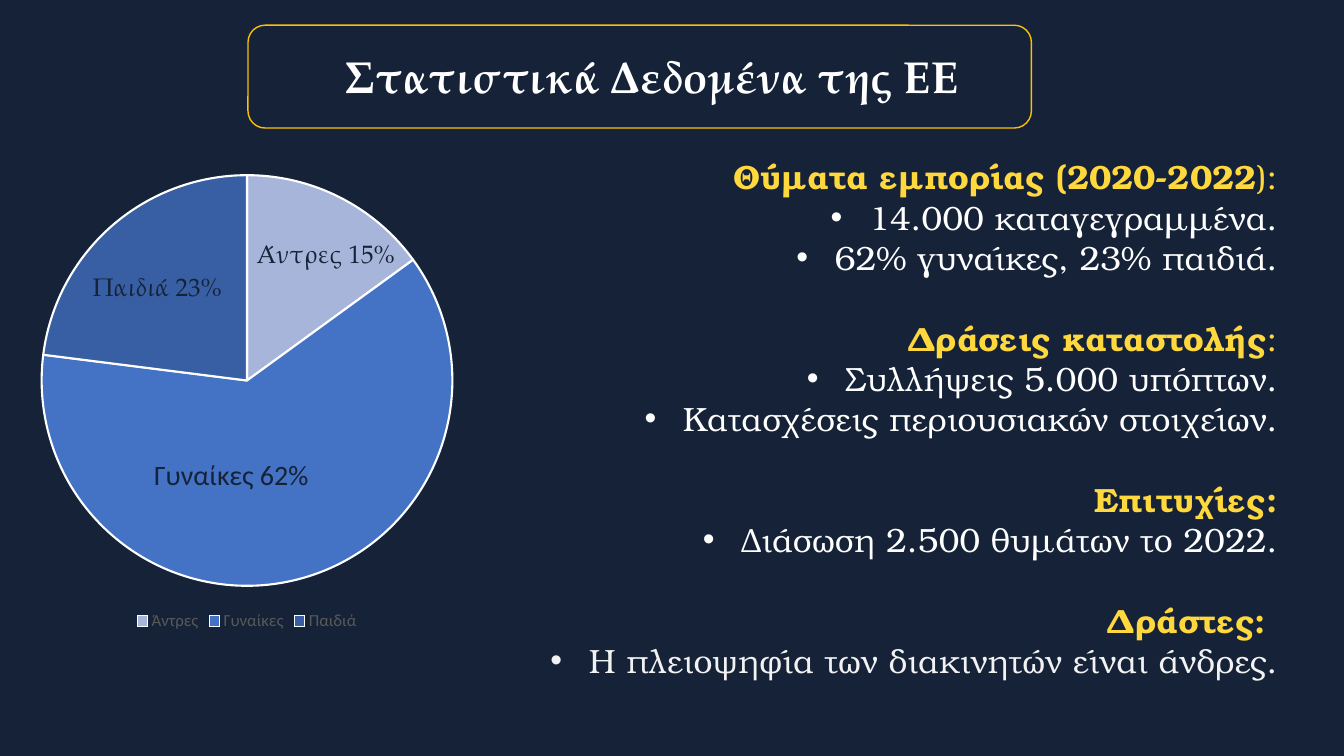
"""Build a slide of EU trafficking statistics: a pie chart beside a list of facts."""
import pptx
import pptx.chart.data
import pptx.dml.color
import pptx.enum.chart
import pptx.enum.shapes
import pptx.enum.text
import pptx.util
from lxml import etree

Inches = pptx.util.Inches
Pt = pptx.util.Pt
RGB = pptx.dml.color.RGBColor.from_string
ALIGN = pptx.enum.text.PP_ALIGN

THEME = {
    "navy": RGB("152238"), "white": RGB("FFFFFF"), "soft": RGB("F2F2F2"),
    "yellow": RGB("FFD83D"), "gold": RGB("FFC000"), "grey": RGB("595959"),
    "slices": [RGB("A8B5DB"), RGB("4472C4"), RGB("385FA3")],
    "title": Pt(32), "body": Pt(24), "label": Pt(18), "label_big": Pt(20), "legend": Pt(12),
    "display": "TeX Gyre Pagella", "text": "TeX Gyre Bonum", "plain": "Calibri",
}


def style(font, name, size, color, bold=False):
    font.name, font.size, font.bold = name, size, bold
    font.color.rgb = color


def place(sp, left, top, width, height):
    sp.left, sp.top, sp.width, sp.height = map(Inches, (left, top, width, height))


prs = pptx.Presentation()
prs.slide_width, prs.slide_height = Inches(13.33), Inches(7.5)
s = prs.slides.add_slide(prs.slide_layouts[1])
s.background.fill.solid()
s.background.fill.fore_color.rgb = THEME["navy"]

title = s.shapes.title
place(title, 3.33, 0.43, 7.54, 0.64)
title.text_frame.text = "Στατιστικά Δεδομένα της ΕΕ"
title.text_frame.auto_size = pptx.enum.text.MSO_AUTO_SIZE.NONE
p = title.text_frame.paragraphs[0]
p.alignment = ALIGN.LEFT
style(p.runs[0].font, THEME["display"], THEME["title"], THEME["white"], True)

frame = s.shapes.add_shape(pptx.enum.shapes.MSO_SHAPE.ROUNDED_RECTANGLE,
                           Inches(2.46), Inches(0.25), Inches(7.77), Inches(1.02))
frame.shadow.inherit = False
frame.fill.background()
frame.line.color.rgb = THEME["gold"]
frame.line.width = Pt(1)

sections = [
    ("Θύματα εμπορίας (2020-2022", "):", THEME["white"],
     ["14.000 καταγεγραμμένα.", "62% γυναίκες, 23% παιδιά."]),
    ("Δράσεις καταστολής", ":", THEME["white"],
     ["Συλλήψεις 5.000 υπόπτων.", "Κατασχέσεις περιουσιακών στοιχείων."]),
    ("Επιτυχίες:", "", THEME["white"], ["Διάσωση 2.500 θυμάτων το 2022."]),
    ("Δράστες: ", "", THEME["soft"], ["Η πλειοψηφία των διακινητών είναι άνδρες."]),
]
body = s.placeholders[1]
place(body, 5.23, 1.5, 7.54, 5.76)
tf = body.text_frame
tf.auto_size = pptx.enum.text.MSO_AUTO_SIZE.NONE
for i, (heading, ending, color, facts) in enumerate(sections):
    p = tf.paragraphs[0] if i == 0 else tf.add_paragraph()
    p.alignment = ALIGN.RIGHT
    p.space_before = Pt(28.8 if i else 0)
    pPr = p._p.get_or_add_pPr()
    pPr.set("marL", "0")
    pPr.set("indent", "0")
    etree.SubElement(pPr, pptx.oxml.ns.qn("a:buNone"))
    for text, bold in ((heading, True), (ending, False)):
        if text:
            r = p.add_run()
            r.text = text
            style(r.font, THEME["text"], THEME["body"], THEME["yellow"], bold)
    for fact in facts:
        p = tf.add_paragraph()
        p.text = fact
        p.alignment = ALIGN.RIGHT
        p.space_before = Pt(0)
        pPr = p._p.get_or_add_pPr()
        pPr.set("marL", str(Inches(0.38)))
        pPr.set("indent", str(-Inches(0.38)))
        etree.SubElement(pPr, pptx.oxml.ns.qn("a:buFont")).set("typeface", "Arial")
        etree.SubElement(pPr, pptx.oxml.ns.qn("a:buChar")).set("char", "•")
        style(p.runs[0].font, THEME["text"], THEME["body"], color)

data = pptx.chart.data.CategoryChartData()
data.categories = ["Άντρες", "Γυναίκες", "Παιδιά"]
data.add_series("Series 1", (15, 62, 23))
chart = s.shapes.add_chart(pptx.enum.chart.XL_CHART_TYPE.PIE, Inches(-0.68), Inches(1.6),
                           Inches(6.26), Inches(4.7), data).chart
chart.has_title = False
chart.has_legend = True
chart.legend.position = pptx.enum.chart.XL_LEGEND_POSITION.BOTTOM
chart.legend.include_in_layout = False
style(chart.legend.font, THEME["plain"], THEME["legend"], THEME["grey"])
for i, color in enumerate(THEME["slices"]):
    fmt = chart.plots[0].series[0].points[i].format
    fmt.fill.solid()
    fmt.fill.fore_color.rgb = color
    fmt.line.color.rgb = THEME["white"]
    fmt.line.width = Pt(1.5)

labels = [
    ("Άντρες 15%", 2.45, 2.32, 1.89, 0.4, THEME["display"], THEME["label"]),
    ("Γυναίκες 62%", 1.43, 4.49, 2.07, 0.44, THEME["plain"], THEME["label_big"]),
    ("Παιδιά 23%", 0.82, 2.64, 1.63, 0.4, THEME["display"], THEME["label"]),
]
for text, left, top, width, height, font, size in labels:
    sp = s.shapes.add_textbox(Inches(left), Inches(top), Inches(width), Inches(height))
    sp.text_frame.word_wrap = True
    sp.text_frame.text = text
    style(sp.text_frame.paragraphs[0].runs[0].font, font, size, THEME["navy"])

prs.save("out.pptx")
